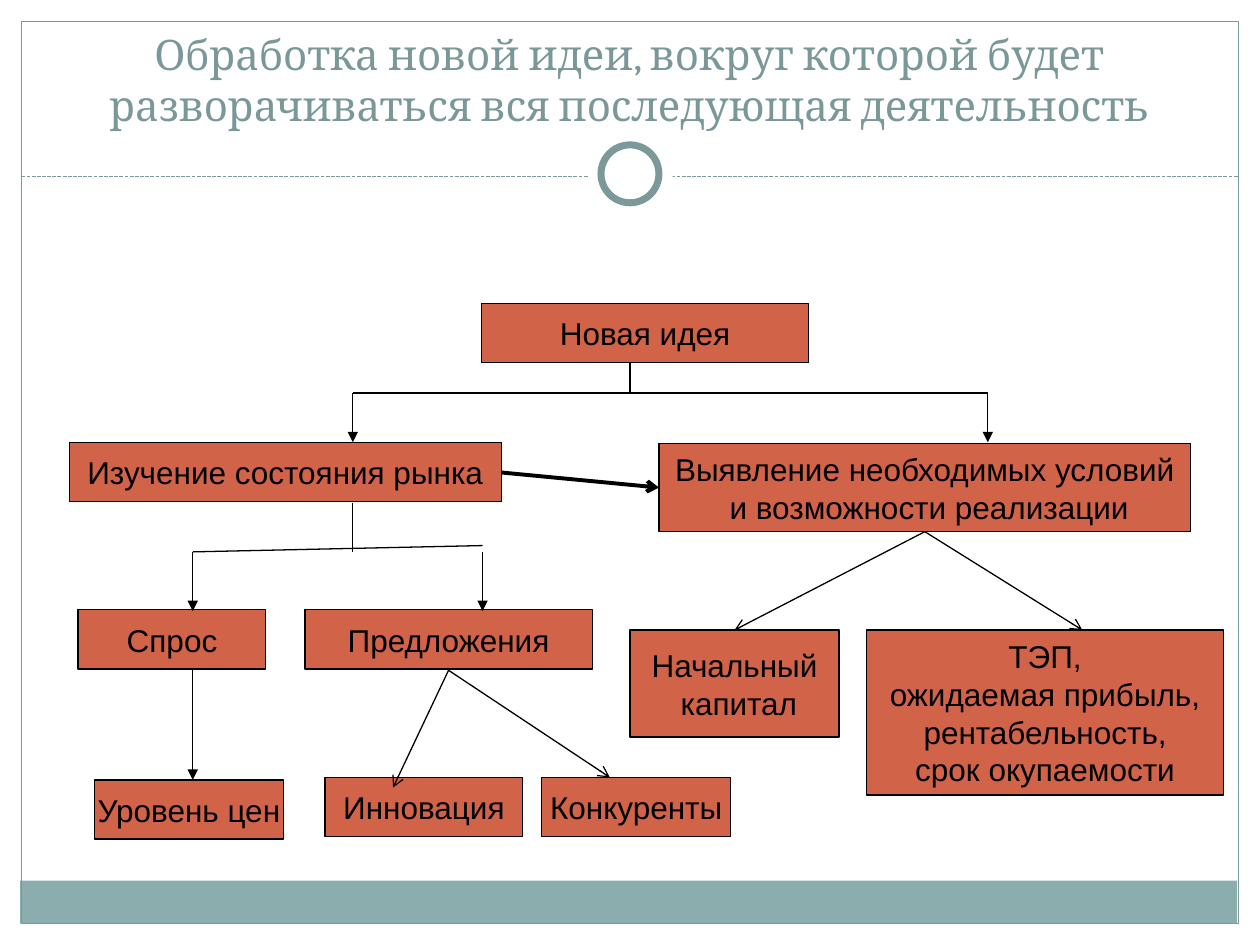
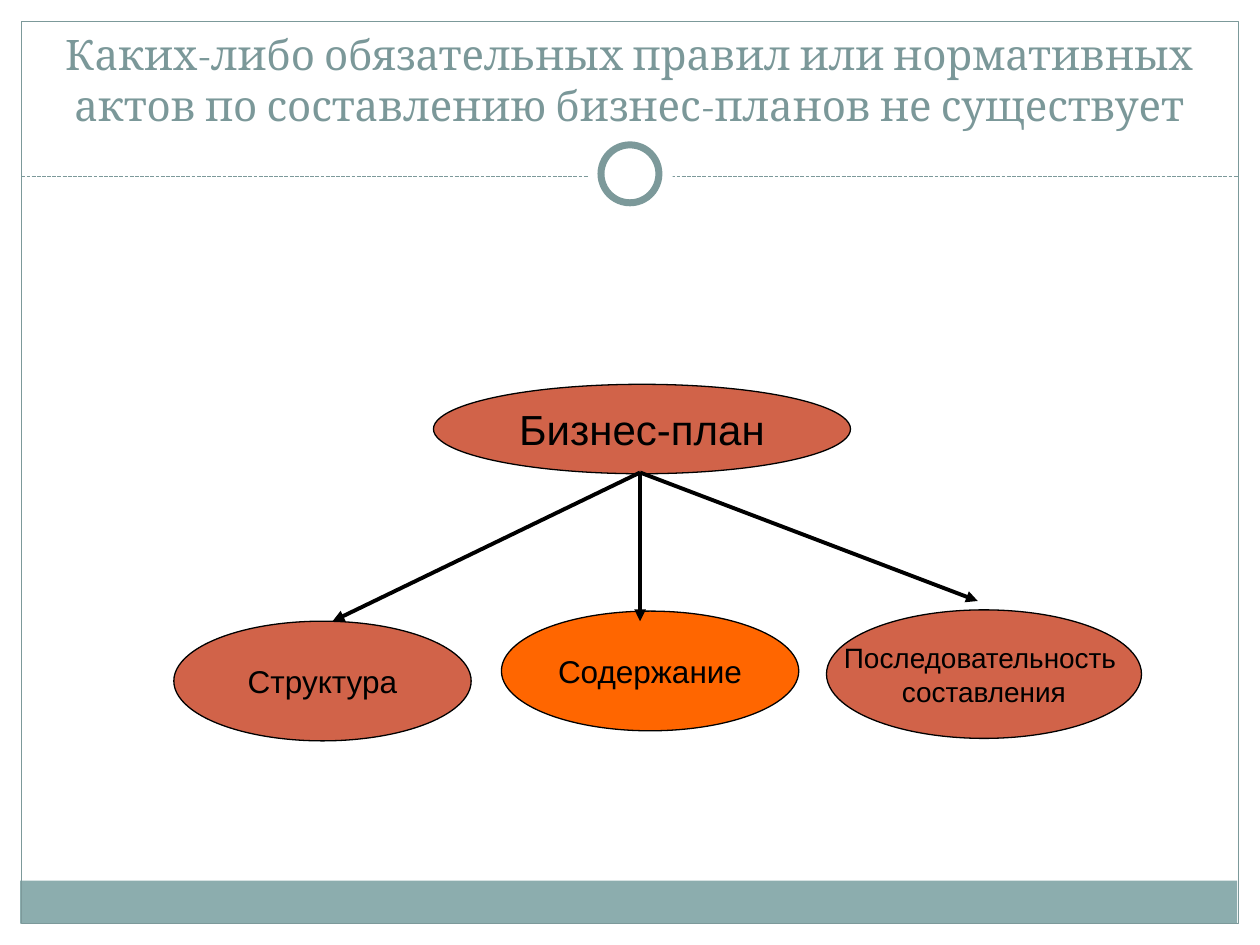
from dataclasses import dataclass

from lxml.etree import SubElement
from pptx import Presentation
from pptx.dml.color import RGBColor
from pptx.enum.dml import MSO_LINE
from pptx.enum.shapes import MSO_CONNECTOR, MSO_SHAPE
from pptx.enum.text import MSO_ANCHOR, MSO_AUTO_SIZE, PP_ALIGN
from pptx.oxml.ns import qn
from pptx.util import Inches, Pt


@dataclass(frozen=True)
class Theme:
    paper: str = "FFFFFF"
    ink: str = "000000"
    title: str = "7B9899"
    frame: str = "7C999A"
    band: str = "8CADAE"
    node: str = "D16349"
    accent: str = "FF6600"
    title_font: str = "Cambria"
    body_font: str = "Arial"
    large: int = 24
    medium: int = 18
    small: int = 16
    thin: float = 0.75
    bold_line: float = 2.25
    ring_line: float = 4


class DiagramDeck:
    def __init__(self, theme):
        self.theme = theme
        self.deck = Presentation()
        self.deck.slide_width = Inches(10)
        self.deck.slide_height = Inches(7.5)
        self.page = None

    def add_page(self, title):
        layout = self.deck.slide_layouts.get_by_name("Title Only")
        self.page = self.deck.slides.add_slide(layout)
        self.draw_frame()
        self.set_title(title)

    def draw_frame(self):
        theme = self.theme
        self.shape(MSO_SHAPE.RECTANGLE, (0.16, 6.99, 9.66, 0.34), fill=theme.band)
        self.shape(MSO_SHAPE.RECTANGLE, (0.17, 0.17, 9.66, 7.16), line=theme.frame)
        self.line((0.17, 1.4), (9.83, 1.4), color=theme.frame, dash=MSO_LINE.SQUARE_DOT)
        self.shape(MSO_SHAPE.OVAL, (4.67, 1.05, 0.67, 0.67), fill=theme.paper)
        self.shape(MSO_SHAPE.OVAL, (4.77, 1.15, 0.46, 0.46), fill=theme.paper,
                   line=theme.frame, width=theme.ring_line)

    def set_title(self, text):
        box = self.page.shapes.title
        box.left, box.top, box.width, box.height = map(Inches, (0.33, 0.25, 9.33, 0.83))
        self.set_text(box, text, self.theme.title_font, self.theme.large, self.theme.title)
        box.text_frame.vertical_anchor = MSO_ANCHOR.BOTTOM

    def set_text(self, box, text, font, size, color, wrap=True):
        frame = box.text_frame
        frame.text = text
        frame.word_wrap = wrap
        frame.auto_size = MSO_AUTO_SIZE.NONE
        frame.vertical_anchor = MSO_ANCHOR.MIDDLE
        for para in frame.paragraphs:
            para.alignment = PP_ALIGN.CENTER
            for span in para.runs:
                span.font.name = font
                span.font.size = Pt(size)
                span.font.color.rgb = RGBColor.from_string(color)

    def shape(self, kind, place, fill=None, line=None, width=None):
        box = self.page.shapes.add_shape(kind, *map(Inches, place))
        box.shadow.inherit = False
        if fill:
            box.fill.solid()
            box.fill.fore_color.rgb = RGBColor.from_string(fill)
        else:
            box.fill.background()
        if line:
            box.line.color.rgb = RGBColor.from_string(line)
            box.line.width = Pt(width or self.theme.thin)
        else:
            box.line.fill.background()
        return box

    def node(self, text, place, kind=MSO_SHAPE.RECTANGLE, fill=None, size=None):
        theme = self.theme
        box = self.shape(kind, place, fill or theme.node, theme.ink)
        self.set_text(box, text, theme.body_font, size or theme.medium, theme.ink, wrap=False)

    def line(self, start, end, head=None, width=None, color=None, dash=None):
        connector = self.page.shapes.add_connector(
            MSO_CONNECTOR.STRAIGHT, *map(Inches, (*start, *end)))
        connector.line.color.rgb = RGBColor.from_string(color or self.theme.ink)
        connector.line.width = Pt(width or self.theme.thin)
        if dash:
            connector.line.dash_style = dash
        properties = connector.element.spPr
        if head:
            SubElement(properties.find(qn("a:ln")), qn("a:tailEnd"), type=head)
        SubElement(properties, qn("a:effectLst"))

    def save(self):
        self.deck.save("out.pptx")


def build_idea_page(deck):
    deck.add_page("Обработка новой идеи, вокруг которой будет "
                  "разворачиваться вся последующая деятельность")
    row = 0.47
    nodes = [
        ("Новая идея", (3.82, 2.41, 2.6, row)),
        ("Уровень цен", (0.75, 6.19, 1.5, row)),
        ("Инновация", (2.58, 6.17, 1.57, row)),
        ("Конкуренты", (4.3, 6.17, 1.5, row)),
        ("ТЭП,\n ожидаемая прибыль, \nрентабельность,\nсрок окупаемости",
         (6.88, 5, 2.83, 1.31)),
        ("Начальный\n капитал", (5, 5, 1.66, 0.85)),
        ("Предложения", (2.42, 4.84, 2.28, row)),
        ("Спрос", (0.62, 4.84, 1.49, row)),
        ("Выявление необходимых условий\n и возможности реализации",
         (5.23, 3.52, 4.22, 0.7)),
        ("Изучение состояния рынка", (0.55, 3.51, 3.43, row)),
    ]
    for text, place in nodes:
        deck.node(text, place)

    market, conditions, demand, supply = 2.8, 7.84, 1.53, 3.83
    idea_bar, market_bar = 3.12, 4.38
    branches = [
        ((market, idea_bar), (conditions, idea_bar)),
        ((5, 2.88), (5, idea_bar)),
        ((demand, market_bar), (supply, 4.33)),
        ((market, 3.99), (market, market_bar)),
    ]
    for start, end in branches:
        deck.line(start, end)

    drops = [
        (market, idea_bar, 3.51),
        (conditions, idea_bar, 3.51),
        (demand, market_bar, 4.85),
        (supply, market_bar, 4.85),
        (demand, 5.32, 6.19),
    ]
    for x, top, bottom in drops:
        deck.line((x, top), (x, bottom), head="triangle")

    deck.line((3.98, 3.75), (5.23, 3.87), head="arrow", width=deck.theme.bold_line)
    fans = {
        (3.56, 5.32): [(3.12, 6.25), (4.84, 6.17)],
        (7.34, 4.22): [(5.83, 5), (8.59, 5)],
    }
    for start, ends in fans.items():
        for end in ends:
            deck.line(start, end, head="arrow")


def build_plan_page(deck):
    theme = deck.theme
    deck.add_page("Каких-либо обязательных правил или нормативных "
                  "актов по составлению бизнес-планов не существует")
    nodes = [
        ("Бизнес-план", (3.44, 3.05, 3.31, 0.71), theme.node, theme.large),
        ("Структура", (1.38, 4.93, 2.36, 0.95), theme.node, theme.medium),
        ("Содержание", (3.98, 4.85, 2.36, 0.95), theme.accent, theme.medium),
        ("Последовательность \nсоставления", (6.56, 4.84, 2.5, 1.02),
         theme.node, theme.small),
    ]
    for text, place, fill, size in nodes:
        deck.node(text, place, MSO_SHAPE.OVAL, fill, size)
    for end in [(2.64, 4.93), (7.76, 4.77), (5.08, 4.93)]:
        deck.line((5.08, 3.75), end, head="triangle", width=theme.bold_line)


def main():
    deck = DiagramDeck(Theme())
    build_idea_page(deck)
    build_plan_page(deck)
    deck.save()


if __name__ == "__main__":
    main()
